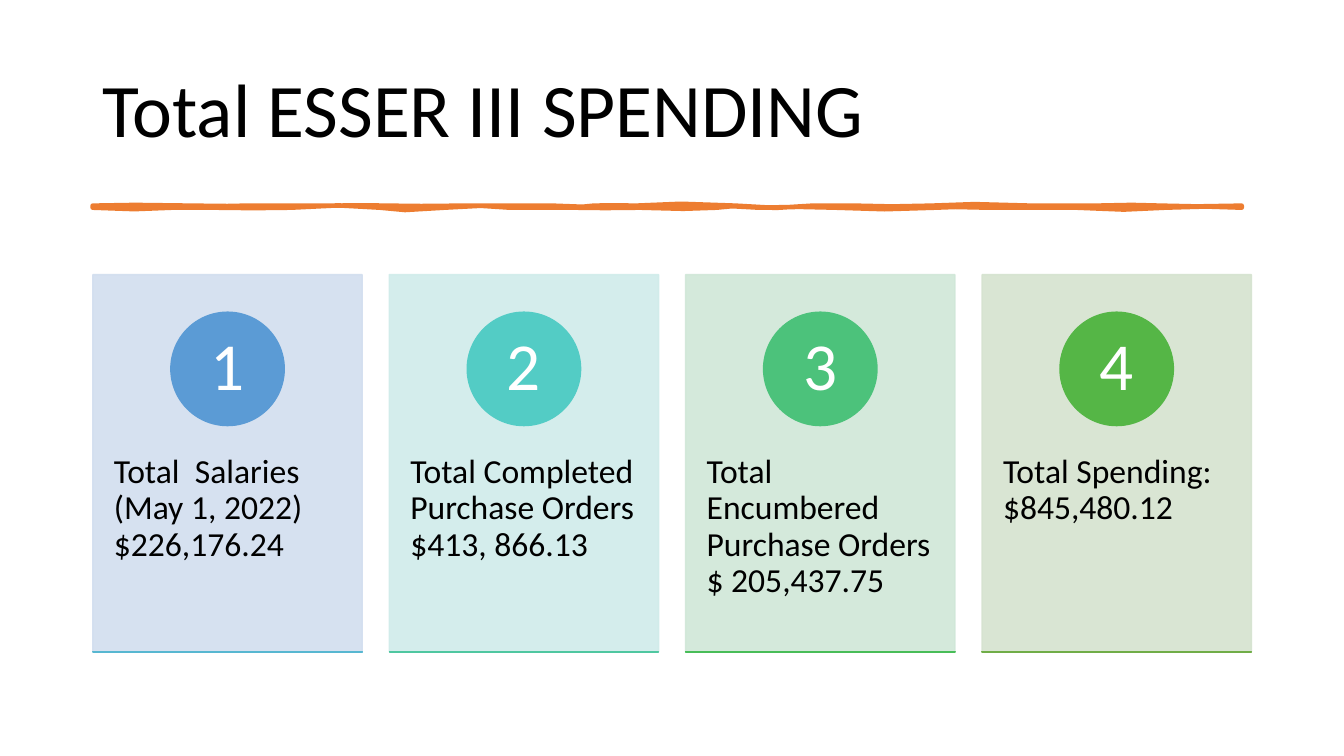
from dataclasses import dataclass

from lxml import etree
from pptx import Presentation
from pptx.dml.color import RGBColor
from pptx.enum.shapes import MSO_SHAPE
from pptx.enum.text import MSO_ANCHOR, PP_ALIGN
from pptx.oxml.ns import qn
from pptx.util import Pt

RECT, OVAL = MSO_SHAPE.RECTANGLE, MSO_SHAPE.OVAL
TOP, MIDDLE = MSO_ANCHOR.TOP, MSO_ANCHOR.MIDDLE
LEFT, CENTER = PP_ALIGN.LEFT, PP_ALIGN.CENTER

COLORS = {"text": "000000", "number": "FFFFFF", "rule": "ED7D31"}
FONT = "Calibri"

CARD_X, CARD_Y, CARD_W, CARD_H = 66.35, 196.2, 192.4, 269.4
CARD_PITCH = 211.7
CAPTION_Y, CAPTION_H = 298.7, 161.7
CIRCLE_Y, CIRCLE_D, NUMBER_D = 223, 81, 57
BASELINE_Y, BASELINE_H = 465.6, 0.07

RULE_Y, RULE_GAP = 146.9, 1.44
RULE_LEFT, RULE_RIGHT = 66.2, 887
CURVE_STEPS = 2

RULE_TOP = [
    (85.7, 0, 103.7, -1.4, 136.8), (170.6, 1.4, 158.4, -0.7, 175.7),
    (192.2, 0.7, 218.2, -0.7, 238.3), (259.2, 0.7, 258.5, -1.4, 276.5),
    (295.2, 1.4, 304.6, -0.7, 331.2), (358.6, 0.7, 370.1, -0.7, 394.6),
    (418.3, 0.7, 418.3, 1.4, 424.1), (430.6, -1.4, 442.8, 0.7, 454.3),
    (465.8, -0.7, 504.7, -2.9, 525.6), (546.5, 2.9, 562.3, 1.4, 580.3),
    (598.3, -1.4, 595.4, 1.4, 610.6), (625, -1.4, 648.7, 2.9, 665.3),
    (681.8, -2.9, 707, 0, 736.6), (765.4, 0, 765.4, 0, 782.6),
    (800.6, 0, 817.9, -1.4, 829.4), (841, 1.4, 866.2, 0, RULE_RIGHT),
]
RULE_BOTTOM = [
    (867.6, 0, 856.1, -2.2, 832.3), (807.8, 2.2, 799.2, 1.4, 769),
    (739.4, -1.4, 736.6, 1.4, 706.3), (676.1, -1.4, 685.4, 0, 668.2),
    (650.9, 0, 612.7, 2.9, 596.9), (580.3, -2.9, 563, 1.4, 542.2),
    (521.3, -1.4, 522, -1.4, 511.9), (502.6, 1.4, 475.9, 0.7, 457.2),
    (438.5, -0.7, 424.8, 1.4, 410.4), (396.7, -1.4, 380.2, 1.4, 364.3),
    (347.8, -1.4, 340.6, -2.2, 317.5), (294.5, 2.2, 280.8, 2.2, 271.4),
    (261.4, -2.2, 223.2, -2.2, 208.1), (193, 2.2, 169.2, -1.4, 153.4),
    (138.2, 1.4, 136.1, -1.4, 123.1), (110.9, 1.4, 82.1, 1.4, RULE_LEFT),
]


@dataclass(frozen=True)
class Card:
    caption: str
    panel: str
    circle: str
    baseline: str


CARDS = [
    Card("Total  Salaries (May 1, 2022) $226,176.24", "D2DEEF", "5B9BD5", "57B7D1"),
    Card("Total Completed Purchase Orders $413, 866.13", "D0ECEA", "53CCC5", "4FC7A0"),
    Card("Total Encumbered Purchase Orders $ 205,437.75", "D0E7D8", "4CC27B", "48BD58"),
    Card("Total Spending: $845,480.12", "D5E3CF", "55B646", "70AD47"),
]


def set_attrs(obj, values: dict) -> None:
    for name, value in values.items():
        setattr(obj, name, value)


def paint(sp, color: str, width: float, alpha: int = 100) -> None:
    sp.shadow.inherit = False
    sp.fill.solid()
    sp.fill.fore_color.rgb = RGBColor.from_string(color)
    sp.line.color.rgb = RGBColor.from_string(color)
    sp.line.width = Pt(width)
    if alpha < 100:
        for clr in sp._element.spPr.iter(qn("a:srgbClr")):
            etree.SubElement(clr, qn("a:alpha"), val=str(alpha * 1000))


def write(sp, text: str, size: float, color: str, align, anchor,
          side: float, top: float) -> None:
    tf = sp.text_frame
    set_attrs(tf, {"word_wrap": True, "vertical_anchor": anchor,
                   "margin_left": Pt(side), "margin_right": Pt(side),
                   "margin_top": Pt(top), "margin_bottom": Pt(top)})
    p = tf.paragraphs[0]
    set_attrs(p, {"alignment": align, "line_spacing": 0.9, "space_before": Pt(0)})
    r = p.add_run()
    r.text = text
    set_attrs(r.font, {"name": FONT, "size": Pt(size)})
    r.font.color.rgb = RGBColor.from_string(color)


def add_title(s, text: str) -> None:
    sp = s.shapes.title
    set_attrs(sp, {"left": Pt(66), "top": Pt(28.75),
                   "width": Pt(828), "height": Pt(104.4)})
    write(sp, text, 54, COLORS["text"], LEFT, MIDDLE, 7.2, 3.6)


def curve_points(x: float, y: float, curves: list) -> list:
    points = []
    for x1, y1, x2, y2, x3 in curves:
        for step in range(1, CURVE_STEPS + 1):
            t = step / CURVE_STEPS
            u = 1 - t
            a, b, c, d = u ** 3, 3 * u * u * t, 3 * u * t * t, t ** 3
            points.append((Pt(a * x + b * x1 + c * x2 + d * x3),
                           Pt(y + b * y1 + c * y2)))
        x = x3
    return points


def add_rule(s) -> None:
    bottom = RULE_Y + RULE_GAP
    fb = s.shapes.build_freeform(Pt(RULE_LEFT), Pt(RULE_Y))
    fb.add_line_segments(
        curve_points(RULE_LEFT, RULE_Y, RULE_TOP)
        + [(Pt(RULE_RIGHT), Pt(bottom))]
        + curve_points(RULE_RIGHT, bottom, RULE_BOTTOM))
    sp = fb.convert_to_shape()
    paint(sp, COLORS["rule"], 3.25)
    etree.SubElement(sp._element.spPr.find(qn("a:ln")), qn("a:round"))


def add_card(s, index: int, card: Card) -> None:
    x = CARD_X + index * CARD_PITCH
    middle = x + CARD_W / 2
    sp = s.shapes.add_shape(RECT, Pt(x), Pt(CARD_Y), Pt(CARD_W), Pt(CARD_H))
    paint(sp, card.panel, 1, 90)

    sp = s.shapes.add_textbox(Pt(x), Pt(CAPTION_Y), Pt(CARD_W), Pt(CAPTION_H))
    write(sp, card.caption, 24, COLORS["text"], LEFT, TOP, 15, 26)

    sp = s.shapes.add_shape(OVAL, Pt(middle - CIRCLE_D / 2), Pt(CIRCLE_Y),
                            Pt(CIRCLE_D), Pt(CIRCLE_D))
    paint(sp, card.circle, 1)

    sp = s.shapes.add_textbox(Pt(middle - NUMBER_D / 2),
                              Pt(CIRCLE_Y + (CIRCLE_D - NUMBER_D) / 2),
                              Pt(NUMBER_D), Pt(NUMBER_D))
    write(sp, str(index + 1), 48, COLORS["number"], CENTER, MIDDLE, 6.5, 1)

    sp = s.shapes.add_shape(RECT, Pt(x), Pt(BASELINE_Y), Pt(CARD_W), Pt(BASELINE_H))
    paint(sp, card.baseline, 1)


def main() -> None:
    prs = Presentation()
    set_attrs(prs, {"slide_width": Pt(960), "slide_height": Pt(540)})
    s = prs.slides.add_slide(prs.slide_layouts[5])
    add_title(s, "Total ESSER III SPENDING")
    add_rule(s)
    for index, card in enumerate(CARDS):
        add_card(s, index, card)
    prs.save("out.pptx")


if __name__ == "__main__":
    main()
